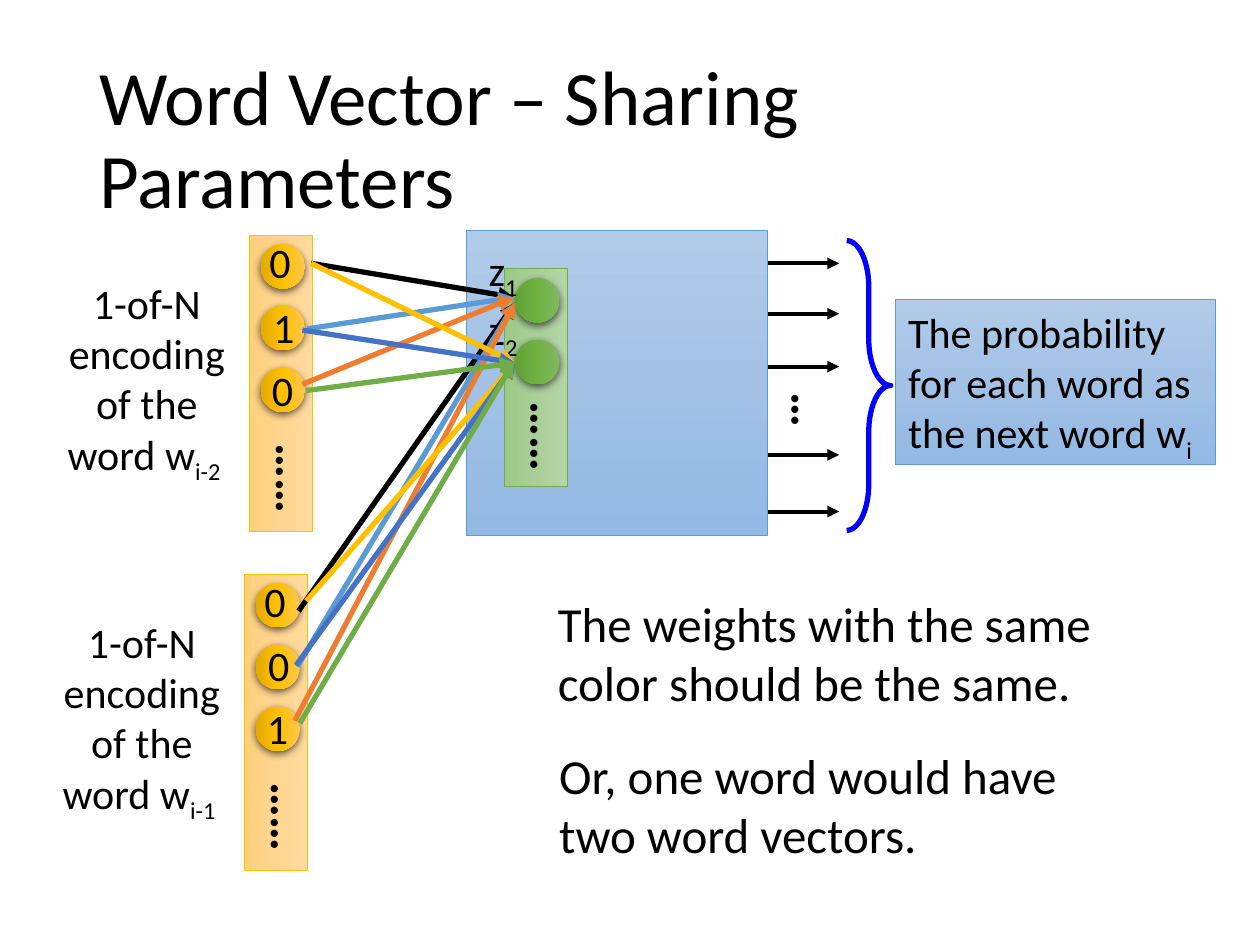
from lxml.etree import SubElement
from pptx import Presentation
from pptx.dml.color import RGBColor
from pptx.enum.shapes import MSO_CONNECTOR, MSO_SHAPE
from pptx.enum.text import MSO_ANCHOR, MSO_AUTO_SIZE, PP_ALIGN
from pptx.oxml import parse_xml
from pptx.oxml.ns import nsdecls, qn
from pptx.util import Inches, Pt

FONT, BLACK = "Calibri", "000000"
BLUE = ("B1CBE9", "A3C1E5", "93B9E4")
PALE_GREEN = ("B5D5A7", "AACE9A", "9CC987")
GREEN = ("81B861", "6FB242", "62A336")
PALE_ORANGE = ("FFDB9E", "FFD590", "FFD07C")
ORANGE = ("FFC64B", "FFC000", "E3AB00")

NODE = 0.35
NODE_PITCH = 0.49
OUTPUT_ROWS = (2.09, 2.49, 2.91, 3.61, 4.06)

# Left and top of each column of inputs, subscript of its word, its digits
ENCODINGS = [
    (1.98, 1.87, "i-2 ", "010"),
    (1.94, 4.56, "i-1 ", "001"),
]
DIGIT_OFFSETS = [(0.06, -0.04), (0.09, 0.47), (0.08, 0.97)]

LATENT_LABELS = [("1", 1.89), ("2", 2.36)]

# Colour, then start and end of the weight from each encoding
WEIGHTS = [
    (BLACK, (2.47, 2.09), (4.08, 2.36), (2.37, 4.85), (4.09, 2.4)),
    ("5B9BD5", (2.44, 2.61), (4.08, 2.36), (2.36, 5.29), (4.09, 2.4)),
    ("ED7D31", (2.4, 3.05), (4.08, 2.36), (2.34, 5.72), (4.09, 2.4)),
    ("FFC000", (2.47, 2.09), (4.09, 2.88), (2.43, 4.77), (4.09, 2.88)),
    ("4472C4", (2.4, 2.62), (4.09, 2.88), (2.35, 5.28), (4.09, 2.88)),
    ("70AD47", (2.43, 3.1), (4.09, 2.88), (2.38, 5.74), (4.08, 2.87)),
]

presentation = Presentation()
presentation.slide_width, presentation.slide_height = Inches(10), Inches(7.5)
slide = presentation.slides.add_slide(presentation.slide_layouts[6])


def color(value):
    return RGBColor.from_string(value)


def write(shape, paragraphs, size=24, bold=False, align=PP_ALIGN.LEFT,
          anchor=MSO_ANCHOR.TOP, fit=MSO_AUTO_SIZE.SHAPE_TO_FIT_TEXT):
    """Fill the shape with (text, subscript) paragraphs."""
    frame = shape.text_frame
    frame.word_wrap, frame.auto_size = True, fit
    frame.vertical_anchor = anchor
    for index, (text, subscript) in enumerate(paragraphs):
        paragraph = frame.add_paragraph() if index else frame.paragraphs[0]
        paragraph.alignment = align
        paragraph.font.name, paragraph.font.size = FONT, Pt(size)
        paragraph.font.bold = bold
        paragraph.font.color.rgb = color(BLACK)
        paragraph.add_run().text = text
        if subscript:
            run = paragraph.add_run()
            run.text = subscript
            run.font._element.set("baseline", "-25000")


def add_text(left, top, width, height, paragraphs, **style):
    box = slide.shapes.add_textbox(*map(Inches, (left, top, width, height)))
    write(box, paragraphs, **style)
    return box


def add_gradient_shape(kind, left, top, width, height, stops, line=None, upright=False):
    """Add a shape; an upright one is a lying shape turned by 90 degrees."""
    if upright:
        left, top = left + (width - height) / 2, top + (height - width) / 2
        width, height = height, width
    shape = slide.shapes.add_shape(kind, *map(Inches, (left, top, width, height)))
    shape.rotation = 90 if upright else 0
    shape.shadow.inherit = False
    if line:
        shape.line.color.rgb, shape.line.width = color(line), Pt(0.5)
    else:
        shape.line.fill.background()
    shape.fill.gradient()
    shape.fill.gradient_angle = 270
    stop_list = shape._element.spPr.find(qn("a:gradFill")).find(qn("a:gsLst"))
    stop_list.clear()
    for position, value in zip((0, 50000, 100000), stops):
        stop = SubElement(stop_list, qn("a:gs"), pos=str(position))
        SubElement(stop, qn("a:srgbClr"), val=value)
    return shape


def add_node(left, top, stops):
    node = add_gradient_shape(MSO_SHAPE.OVAL, left, top, NODE, NODE, stops, upright=True)
    node._element.spPr.find(qn("a:effectLst")).append(parse_xml(
        f'<a:outerShdw {nsdecls("a")} blurRad="57150" dist="19050" dir="5400000"'
        ' algn="ctr" rotWithShape="0"><a:srgbClr val="000000">'
        '<a:alpha val="63000"/></a:srgbClr></a:outerShdw>'))


def add_dots(left, top, width, height, text):
    add_text(left, top, width, height, [(text, "")], size=28, bold=True).rotation = 90


def add_arrow(start, end, line, width):
    arrow = slide.shapes.add_connector(
        MSO_CONNECTOR.STRAIGHT, *map(Inches, (*start, *end)))
    arrow.line.color.rgb, arrow.line.width = color(line), Pt(width)
    SubElement(arrow.line._get_or_add_ln(), qn("a:tailEnd"), type="triangle")
    SubElement(arrow._element.spPr, qn("a:effectLst"))


def add_encoding(left, top, subscript, digits):
    add_text(left - 1.67, top + 0.28, 1.71, 1.72,
             [("1-of-N encoding", ""), ("of the word w", subscript)],
             align=PP_ALIGN.CENTER)
    add_gradient_shape(MSO_SHAPE.RECTANGLE, left, top, 0.5, 2.35,
                       PALE_ORANGE, "FFC000", upright=True)
    for row in range(len(digits)):
        add_node(left + 0.09, top + 0.07 + row * NODE_PITCH, ORANGE)
    add_dots(left, top + 1.83, 0.93, 0.37, "……")
    for digit, (right, down) in zip(digits, DIGIT_OFFSETS):
        add_text(left + right, top + down, 0.43, 0.5, [(digit, "")])


title = add_text(0.69, 0.4, 8.62, 1.45, [("Word Vector – Sharing Parameters", "")],
                 size=44, anchor=MSO_ANCHOR.MIDDLE, fit=MSO_AUTO_SIZE.NONE)
title.text_frame.paragraphs[0].line_spacing = 0.9

brace = slide.shapes.add_shape(
    MSO_SHAPE.LEFT_BRACE, *map(Inches, (6.72, 1.91, 0.35, 2.3)))
brace._element.spPr.find(qn("a:xfrm")).set("flipH", "1")
brace.adjustments[0], brace.adjustments[1] = 1.05, 0.5
brace.shadow.inherit = False
brace.fill.background()
brace.line.color.rgb, brace.line.width = color("0000FF"), Pt(3)

for row_top in OUTPUT_ROWS:
    add_arrow((5.83, row_top), (6.66, row_top), BLACK, 2.25)
add_dots(6.15, 3.02, 0.57, 0.57, "…")

add_gradient_shape(MSO_SHAPE.RECTANGLE, 3.7, 1.83, 2.39, 2.42, BLUE, "5B9BD5")
probability = add_gradient_shape(
    MSO_SHAPE.RECTANGLE, 7.11, 2.38, 2.54, 1.31, BLUE, "5B9BD5")
write(probability, [("The probability for each word as the next word w", "i")])

add_gradient_shape(MSO_SHAPE.RECTANGLE, 4, 2.13, 0.5, 1.73,
                   PALE_GREEN, "70AD47", upright=True)
for row in range(len(LATENT_LABELS)):
    add_node(4.09, 2.21 + row * NODE_PITCH, GREEN)
add_dots(4, 3.37, 0.93, 0.37, "……")
for subscript, label_top in LATENT_LABELS:
    add_text(3.78, label_top, 0.6, 0.5, [("z", subscript)])

for encoding in ENCODINGS:
    add_encoding(*encoding)

add_text(4.33, 4.66, 4.66, 1.04,
         [("The weights with the same color should be the same.", "")], size=28)
for line, first_start, first_end, second_start, second_end in WEIGHTS:
    add_arrow(first_start, first_end, line, 3)
    add_arrow(second_start, second_end, line, 3)
add_text(4.34, 5.87, 4.66, 1.04,
         [("Or, one word would have two word vectors.", "")], size=28)

presentation.save("out.pptx")
